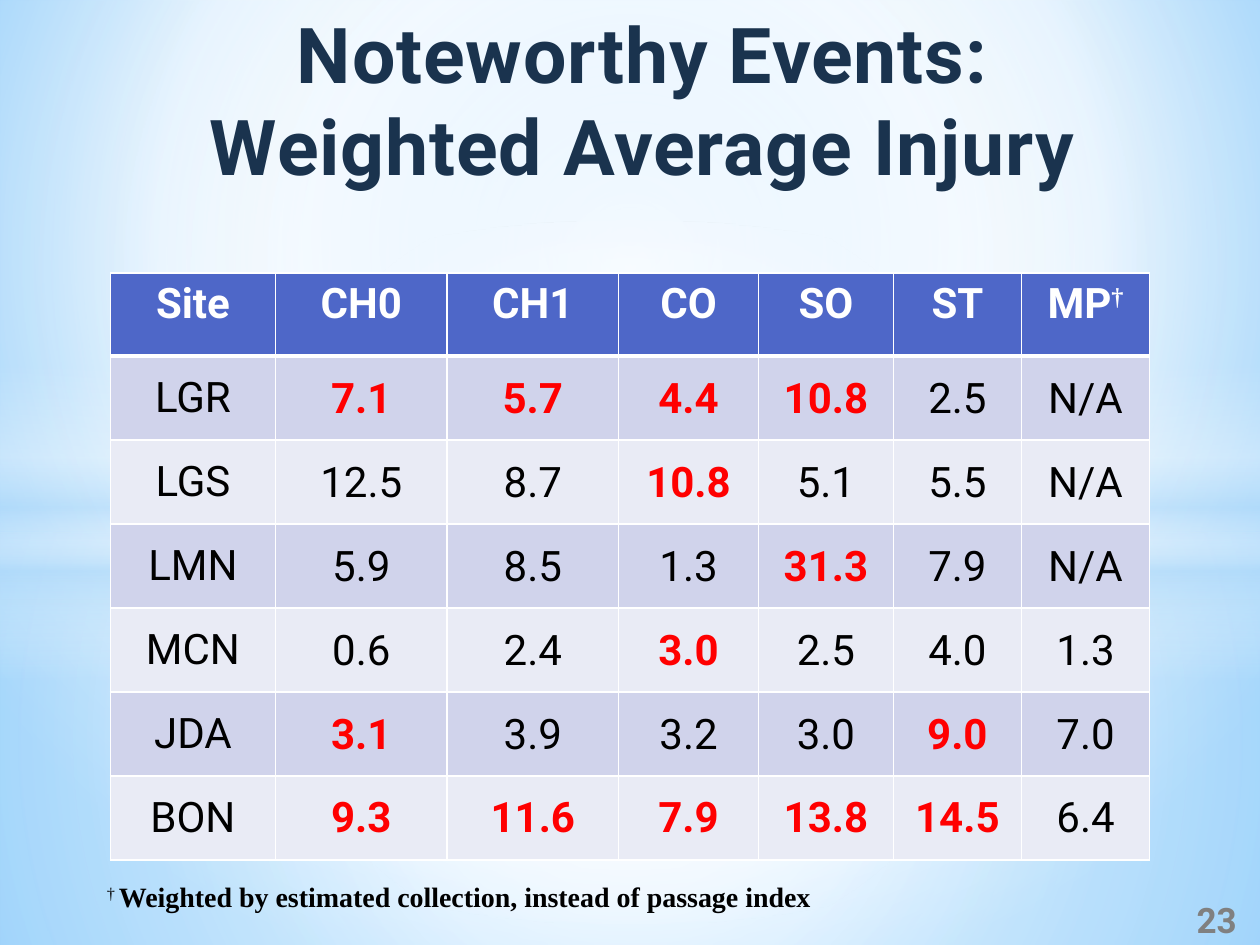
from lxml import etree
from pptx import Presentation
from pptx.dml.color import RGBColor
from pptx.enum.shapes import MSO_SHAPE
from pptx.enum.text import MSO_ANCHOR, PP_ALIGN
from pptx.oxml import parse_xml
from pptx.oxml.ns import nsdecls, qn
from pptx.util import Pt

RECT, OVAL = MSO_SHAPE.RECTANGLE, MSO_SHAPE.OVAL
TOP, MIDDLE = MSO_ANCHOR.TOP, MSO_ANCHOR.MIDDLE
LEFT, CENTER = PP_ALIGN.LEFT, PP_ALIGN.CENTER
SANS, SERIF = "Roboto", "Times New Roman"
COLORS = {
    "white": "FFFFFF", "black": "000000", "red": "FF0000", "gray": "808080",
    "navy": "1A334E", "header": "4E67C8", "odd": "D0D3EB", "even": "E9EBF5",
    "mist": "B4DCFA", "sky": "9ED5FF", "azure": "5BB9FF",
}
CENTERED = (50, 50, 50, 50)
COLUMN_WIDTHS = [94.5, 98, 98, 80, 77, 73.25, 73.25]
HEADER_HEIGHT, ROW_HEIGHT = 47.5, 48
SITES = ["Site", "CH0", "CH1", "CO", "SO", "ST", "MP"]
INJURY_RATES = [
    ["LGR", "7.1*", "5.7*", "4.4*", "10.8*", "2.5", "N/A"],
    ["LGS", "12.5", "8.7", "10.8*", "5.1", "5.5", "N/A"],
    ["LMN", "5.9", "8.5", "1.3", "31.3*", "7.9", "N/A"],
    ["MCN", "0.6", "2.4", "3.0*", "2.5", "4.0", "1.3"],
    ["JDA", "3.1*", "3.9", "3.2", "3.0", "9.0*", "7.0"],
    ["BON", "9.3*", "11.6*", "7.9*", "13.8*", "14.5*", "6.4"],
]


class SlideBuilder:
    """Holds the slide style and adds each kind of element to the current slide."""

    def __init__(self, slide):
        self.slide = slide

    def gradient(self, stops, focus=None):
        marks = "".join(
            f'<a:gs pos="{position * 1000}"><a:srgbClr val="{COLORS[color]}">'
            f'<a:alpha val="{opacity * 1000}"/></a:srgbClr></a:gs>'
            for position, color, opacity in stops)
        direction = '<a:lin ang="5400000" scaled="0"/>'
        if focus:
            edges = " ".join(f'{side}="{value * 1000}"' for side, value in zip("ltrb", focus))
            direction = f'<a:path path="circle"><a:fillToRect {edges}/></a:path>'
        return parse_xml(f'<a:gradFill {nsdecls("a")} rotWithShape="1">'
                         f'<a:gsLst>{marks}</a:gsLst>{direction}</a:gradFill>')

    def background(self, stops, focus):
        self.slide.background.fill.solid()
        properties = self.slide.element.cSld.bg.bgPr
        properties.replace(properties.find(qn("a:solidFill")), self.gradient(stops, focus))

    def glow(self, kind, box, stops, focus=None):
        shape = self.slide.shapes.add_shape(kind, *map(Pt, box))
        shape.shadow.inherit = False
        shape.line.fill.background()
        shape.fill.solid()
        properties = shape.element.spPr
        properties.replace(properties.find(qn("a:solidFill")), self.gradient(stops, focus))

    def run(self, paragraph, text, size, color, bold=False, font=SANS, raised=False, spacing=0):
        run = paragraph.add_run()
        run.text = text
        run.font.name, run.font.size, run.font.bold = font, Pt(size), bold
        run.font.color.rgb = RGBColor.from_string(COLORS[color])
        properties = run.font._element
        if raised:
            properties.set("baseline", "30000")
        if spacing:
            properties.set("spc", str(int(spacing * 100)))

    def text(self, box, lines, align=CENTER, anchor=TOP, margin=0, indent=0):
        frame = self.slide.shapes.add_textbox(*map(Pt, box)).text_frame
        frame.word_wrap, frame.vertical_anchor = True, anchor
        for number, runs in enumerate(lines):
            paragraph = frame.add_paragraph() if number else frame.paragraphs[0]
            paragraph.alignment = align
            properties = paragraph._p.get_or_add_pPr()
            properties.set("marL", str(Pt(margin)))
            properties.set("indent", str(Pt(indent)))
            for run in runs:
                self.run(paragraph, **run)

    def cell(self, cell, fill, runs, bottom=1, anchor=MIDDLE, tight=False):
        cell.vertical_anchor = anchor
        if tight:
            cell.margin_left = cell.margin_top = cell.margin_right = Pt(0.75)
            cell.margin_bottom = 0
        properties = cell._tc.get_or_add_tcPr()
        for side, width in zip("LRTB", (1, 1, 1, bottom)):
            border = etree.SubElement(properties, qn(f"a:ln{side}"), w=str(Pt(width)))
            paint = etree.SubElement(border, qn("a:solidFill"))
            etree.SubElement(paint, qn("a:srgbClr"), val=COLORS["white"])
        cell.fill.solid()
        cell.fill.fore_color.rgb = RGBColor.from_string(COLORS[fill])
        paragraph = cell.text_frame.paragraphs[0]
        paragraph.alignment = CENTER
        for run in runs:
            self.run(paragraph, size=24, **run)

    def table(self, left, top, widths, header, rows):
        height = HEADER_HEIGHT + ROW_HEIGHT * len(rows)
        table = self.slide.shapes.add_table(
            len(rows) + 1, len(widths), Pt(left), Pt(top), Pt(sum(widths)), Pt(height)).table
        table.horz_banding = False
        for column, width in zip(table.columns, widths):
            column.width = Pt(width)
        for number, row in enumerate(table.rows):
            row.height = Pt(ROW_HEIGHT if number else HEADER_HEIGHT)
        for column, label in enumerate(header):
            runs = [dict(text=label, color="white", bold=True)]
            if label == "MP":
                runs.append(dict(text="†", color="white", bold=True, font=SERIF, raised=True))
            self.cell(table.cell(0, column), "header", runs, bottom=3, anchor=TOP)
        for number, values in enumerate(rows, 1):
            for column, value in enumerate(values):
                notable = value.endswith("*")
                runs = [dict(text=value.rstrip("*"), color="red" if notable else "black",
                             bold=notable)]
                self.cell(table.cell(number, column), "odd" if number % 2 else "even",
                          runs, tight=column > 0)


def main():
    presentation = Presentation()
    presentation.slide_width, presentation.slide_height = Pt(720), Pt(540)
    builder = SlideBuilder(presentation.slides.add_slide(presentation.slide_layouts[6]))

    builder.background([(0, "sky", 100), (60, "white", 100), (100, "azure", 100)],
                       (20, 10, 20, 60))
    builder.glow(RECT, (0, 304.5, 720, 235.5),
                 [(0, "white", 91), (37, "white", 76), (100, "mist", 79)], CENTERED)
    builder.glow(RECT, (0, 0, 720, 304.5),
                 [(0, "white", 89), (48, "white", 62), (100, "mist", 79)], CENTERED)
    builder.glow(RECT, (0, 209, 720, 180),
                 [(0, "white", 0), (29, "white", 30), (45, "mist", 40),
                  (55, "white", 26), (65, "mist", 60), (100, "white", 0)])
    builder.glow(OVAL, (0, 126, 720, 402),
                 [(0, "white", 100), (54, "white", 0)], CENTERED)

    title_style = dict(size=44, color="navy", bold=True, spacing=0.5)
    builder.text((0, 0, 720, 54),
                 [[dict(text=line, **title_style)]
                  for line in ("Noteworthy Events:", "Weighted Average Injury")], margin=14.4)
    builder.table(63, 156, COLUMN_WIDTHS, SITES, INJURY_RATES)
    builder.text((672, 511, 46.5, 29),
                 [[dict(text="23", size=20, color="gray", bold=True)]], anchor=MIDDLE)
    note_style = dict(size=16, color="black", font=SERIF)
    builder.text((54, 499, 618, 26.5),
                 [[dict(text="† ", raised=True, **note_style),
                   dict(text="Weighted by estimated collection, instead of passage index",
                        bold=True, **note_style)]], align=LEFT, margin=18, indent=-18)
    presentation.save("out.pptx")


if __name__ == "__main__":
    main()
